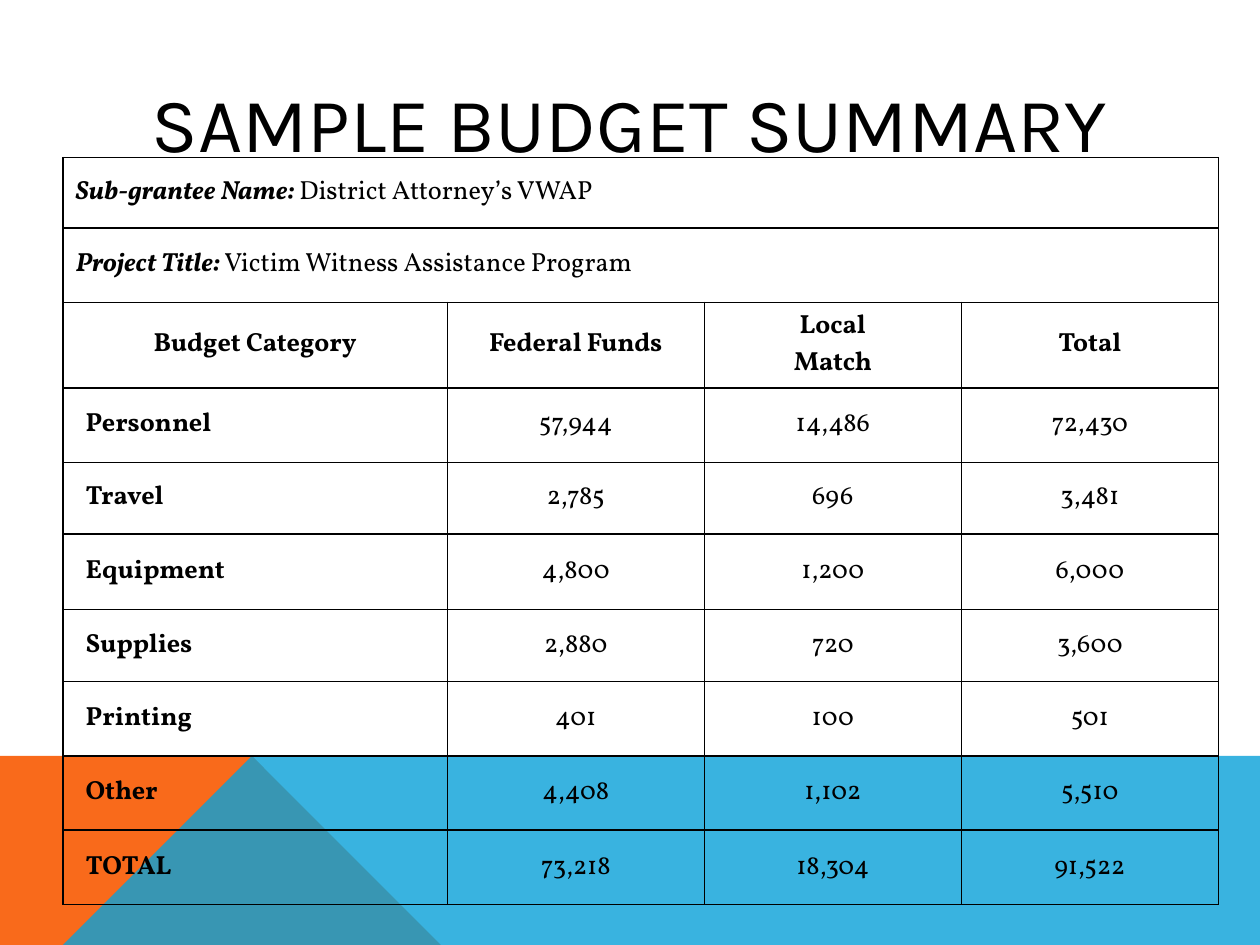
"""Builds a budget summary slide with a bordered table over a coloured footer."""
from lxml.etree import SubElement
from pptx import Presentation
from pptx.dml.color import RGBColor
from pptx.enum.text import MSO_ANCHOR as Anchor, PP_ALIGN as Align
from pptx.oxml.ns import qn
from pptx.util import Inches, Pt

COLORS = {"ink": "000000", "orange": "F96A1B", "blue": "08A1D9"}
TITLE_FONT, BODY_FONT = "Karla", "Vollkorn"
WIDTH, HEIGHT = 10, 7.5
BAND_TOP, PEAK = 5.52, 2.23

TITLE = "SAMPLE BUDGET SUMMARY"
DETAILS = [
    ("Sub-grantee Name:", " District Attorney’s VWAP"),
    ("Project Title:", " Victim Witness Assistance Program"),
]
HEADINGS = ["Budget Category", "Federal Funds", "Local\nMatch", "Total"]
BUDGET = [
    ("Personnel", "57,944", "14,486", "72,430"),
    ("Travel", "2,785", "696", "3,481"),
    ("Equipment", "4,800", "1,200", "6,000"),
    ("Supplies", "2,880", "720", "3,600"),
    ("Printing", "401", "100", "501"),
    ("Other", "4,408", "1,102", "5,510"),
    ("TOTAL", "73,218", "18,304", "91,522"),
]
COLUMNS = [3.05, 2.04, 2.04, 2.04]
ROWS = [0.56, 0.59, 0.68, 0.59, 0.57, 0.6, 0.57, 0.59, 0.59, 0.59]
FOOTER = [
    ("orange", 100, [(0, HEIGHT), (0, BAND_TOP), (PEAK, BAND_TOP), (3.91, HEIGHT)]),
    ("blue", 80, [(0, HEIGHT), (PEAK, BAND_TOP), (WIDTH, BAND_TOP), (WIDTH, HEIGHT)]),
]


def rgb(name):
    return RGBColor.from_string(COLORS[name])


def style(span, font, size, bold=False, italic=False):
    span.font.name, span.font.size = font, Pt(size)
    span.font.bold, span.font.italic = bold, italic
    span.font.color.rgb = rgb("ink")


def add_footer_shape(page, color, opacity, points):
    builder = page.shapes.build_freeform(*points[0], scale=Inches(1))
    builder.add_line_segments(points[1:], close=True)
    shape = builder.convert_to_shape()
    shape.shadow.inherit = False
    shape.fill.solid()
    shape.fill.fore_color.rgb = rgb(color)
    shape.line.fill.background()
    if opacity < 100:
        fill = shape.fill._xPr.find(qn("a:solidFill"))
        SubElement(fill[0], qn("a:alpha"), val=str(opacity * 1000))


def add_title(page):
    box = page.shapes.add_textbox(Inches(0.5), Inches(0.6), Inches(9), Inches(0.73))
    frame = box.text_frame
    frame.word_wrap = True
    frame.vertical_anchor = Anchor.MIDDLE
    frame.text = TITLE
    para = frame.paragraphs[0]
    para.alignment = Align.CENTER
    style(para.runs[0], TITLE_FONT, 44)


def set_borders(cell):
    properties = cell._tc.get_or_add_tcPr()
    for position, side in enumerate(("lnL", "lnR", "lnT", "lnB")):
        line = properties.makeelement(qn(f"a:{side}"), {"w": str(Pt(1))})
        fill = SubElement(line, qn("a:solidFill"))
        SubElement(fill, qn("a:srgbClr"), val=COLORS["ink"])
        properties.insert(position, line)


def fill_cell(cell, text, bold, align):
    cell.text_frame.text = text
    for para in cell.text_frame.paragraphs:
        para.alignment = align
        style(para.runs[0], BODY_FONT, 15, bold)


def add_budget_table(page):
    frame = page.shapes.add_table(len(ROWS), len(COLUMNS), Inches(0.5), Inches(1.25),
                                  Inches(sum(COLUMNS)), Inches(sum(ROWS)))
    table = frame.table
    table.first_row = table.horz_banding = False
    for column, width in zip(table.columns, COLUMNS):
        column.width = Inches(width)
    for row, height in zip(table.rows, ROWS):
        row.height = Inches(height)
    for cell in table.iter_cells():
        cell.fill.background()
        cell.vertical_anchor = Anchor.MIDDLE
        set_borders(cell)

    for index, (label, value) in enumerate(DETAILS):
        cell = table.cell(index, 0)
        cell.merge(table.cell(index, len(COLUMNS) - 1))
        para = cell.text_frame.paragraphs[0]
        for text, strong in ((label, True), (value, False)):
            span = para.add_run()
            span.text = text
            style(span, BODY_FONT, 15, strong, strong)

    for offset, values in enumerate([HEADINGS, *BUDGET]):
        for column, text in enumerate(values):
            cell = table.cell(len(DETAILS) + offset, column)
            is_label = offset > 0 and column == 0
            fill_cell(cell, text, offset == 0 or column == 0,
                      Align.LEFT if is_label else Align.CENTER)
            if is_label:
                cell.margin_left = Inches(0.18)


def main():
    deck = Presentation()
    deck.slide_width, deck.slide_height = Inches(WIDTH), Inches(HEIGHT)
    page = deck.slides.add_slide(deck.slide_layouts[6])
    for color, opacity, points in FOOTER:
        add_footer_shape(page, color, opacity, points)
    add_title(page)
    add_budget_table(page)
    deck.save("out.pptx")


if __name__ == "__main__":
    main()
